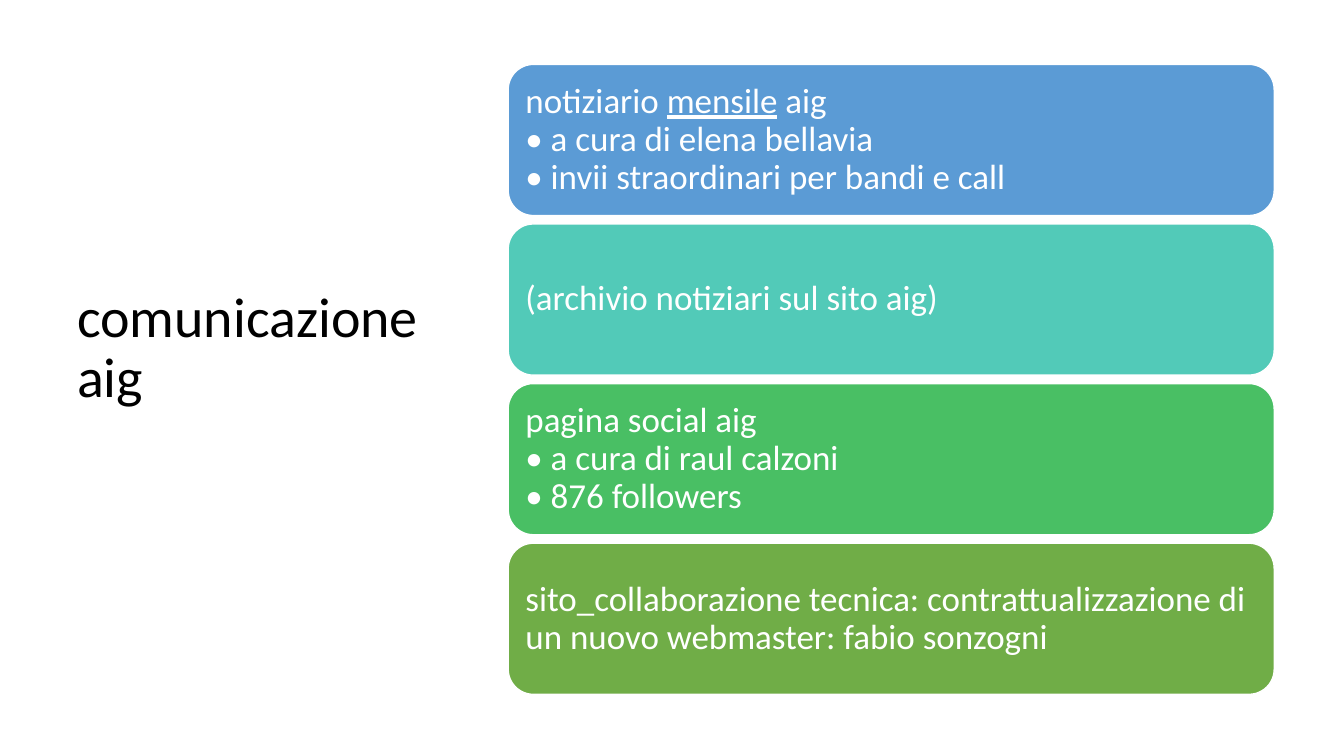
from pptx import Presentation
from pptx.dml.color import RGBColor
from pptx.enum.shapes import MSO_SHAPE as Shape
from pptx.enum.text import MSO_ANCHOR as Anchor, PP_ALIGN as Align
from pptx.util import Pt

FONT = "Calibri"
COLORS = {
    "black": "000000",
    "white": "FFFFFF",
    "blue": "5B9BD5",
    "teal": "52CAB8",
    "green": "49BF64",
    "olive": "70AD47",
}
LEFT, TOP, WIDTH, HEIGHT, PITCH = 363, 46, 547.2, 108, 114

# Each card: colour, then lines made of (text, underlined) runs
CARDS = [
    ("blue", [
        [("notiziario ", False), ("mensile", True), (" aig", False)],
        [("• a cura di elena bellavia", False)],
        [("• invii straordinari per bandi e call", False)],
    ]),
    ("teal", [[("(archivio notiziari sul sito aig)", False)]]),
    ("green", [
        [("pagina social aig", False)],
        [("• a cura di raul calzoni", False)],
        [("• 876 followers", False)],
    ]),
    ("olive", [[("sito_collaborazione tecnica: contrattualizzazione di "
                 "un nuovo webmaster: fabio sonzogni", False)]]),
]


def color(name):
    return RGBColor.from_string(COLORS[name])


def set_text(shape, lines, size, ink, inset):
    """Write the lines as one left-aligned paragraph, centred in height."""
    frame = shape.text_frame
    frame.word_wrap = True
    frame.vertical_anchor = Anchor.MIDDLE
    frame.margin_left = frame.margin_right = Pt(inset)
    para = frame.paragraphs[0]
    para.alignment = Align.LEFT
    para.line_spacing = 0.9
    para.font.name = FONT
    para.font.size = Pt(size)
    para.font.color.rgb = color(ink)
    for row, line in enumerate(lines):
        if row:
            para.add_line_break()
        for text, under in line:
            run = para.add_run()
            run.text = text
            if under:
                run.font.underline = True


def add_title(slide, text):
    box = slide.shapes.add_textbox(Pt(48), Pt(21.5), Pt(275), Pt(456))
    set_text(box, [[(text, False)]], 40, "black", 7.2)


def add_card(slide, top, fill, lines):
    card = slide.shapes.add_shape(
        Shape.ROUNDED_RECTANGLE, Pt(LEFT), Pt(top), Pt(WIDTH), Pt(HEIGHT))
    card.shadow.inherit = False
    card.fill.solid()
    card.fill.fore_color.rgb = color(fill)
    card.line.color.rgb = color("white")
    card.line.width = Pt(1)
    # The rounded corners already add 5.3 pt to the inset
    set_text(card, lines, 25, "white", 7.2)


def main():
    deck = Presentation()
    deck.slide_width, deck.slide_height = Pt(960), Pt(540)
    slide = deck.slides.add_slide(deck.slide_layouts[6])
    add_title(slide, "comunicazione aig")
    for row, (fill, lines) in enumerate(CARDS):
        add_card(slide, TOP + row * PITCH, fill, lines)
    deck.save("out.pptx")


if __name__ == "__main__":
    main()
